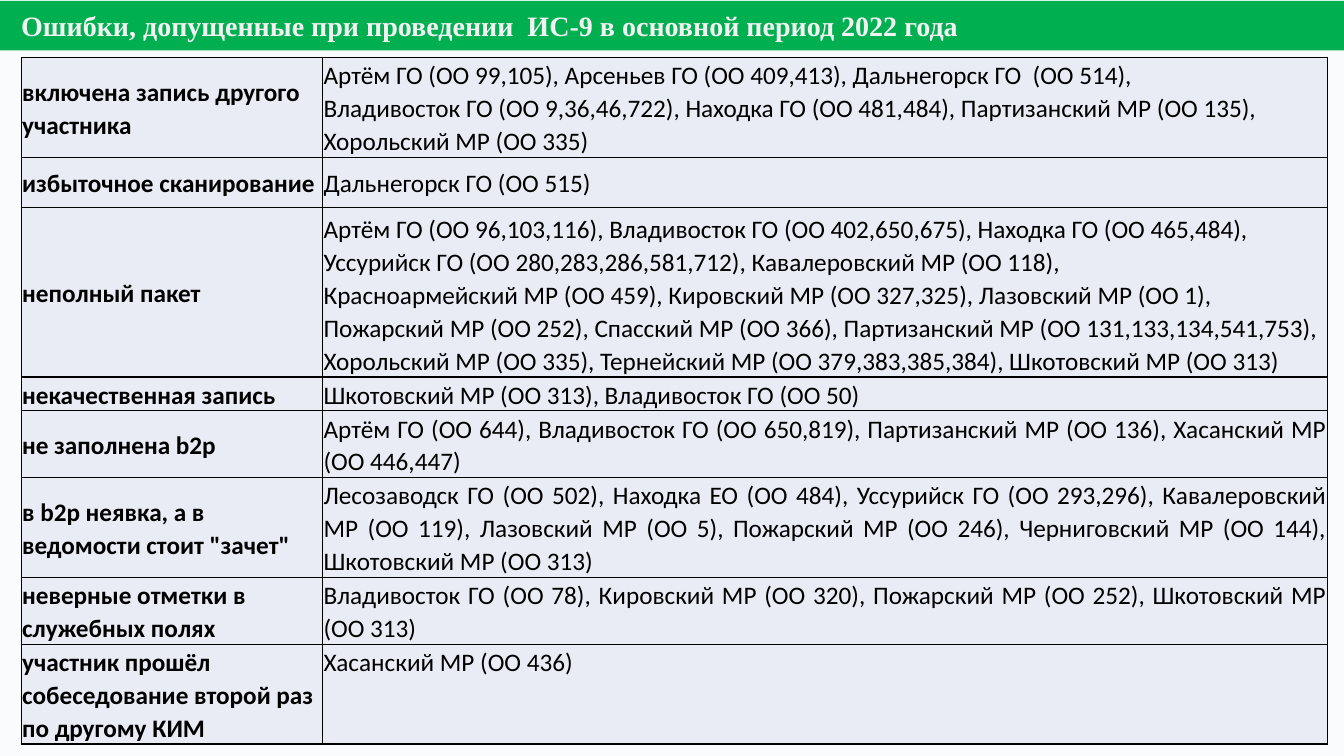
from lxml import etree
from pptx import Presentation
from pptx.dml import color
from pptx.enum import text
from pptx.oxml import ns
from pptx.util import Inches, Pt

BLACK = color.RGBColor(0x00, 0x00, 0x00)
GREEN = color.RGBColor(0x00, 0xAF, 0x50)
PALE = color.RGBColor(0xF2, 0xF2, 0xF2)
LAVENDER = color.RGBColor(0xE9, 0xEB, 0xF5)
BACKDROP = color.RGBColor(0xF9, 0xFB, 0xFC)

LEFT, JUSTIFY = text.PP_ALIGN.LEFT, text.PP_ALIGN.JUSTIFY
TOP, MIDDLE, BOTTOM = text.MSO_ANCHOR.TOP, text.MSO_ANCHOR.MIDDLE, text.MSO_ANCHOR.BOTTOM

ERRORS = [
    (0.99, "включена запись другого участника", LEFT, BOTTOM,
     "Артём ГО (ОО 99,105), Арсеньев ГО (ОО 409,413), Дальнегорск ГО  (ОО 514), \n"
     "Владивосток ГО (ОО 9,36,46,722), Находка ГО (ОО 481,484), Партизанский МР (ОО 135), \n"
     "Хорольский МР (ОО 335)"),
    (0.5, "избыточное сканирование", JUSTIFY, MIDDLE, "Дальнегорск ГО (ОО 515)"),
    (1.68, "неполный пакет", LEFT, BOTTOM,
     "Артём ГО (ОО 96,103,116), Владивосток ГО (ОО 402,650,675), Находка ГО (ОО 465,484), \n"
     "Уссурийск ГО (ОО 280,283,286,581,712), Кавалеровский МР (ОО 118), \n"
     "Красноармейский МР (ОО 459), Кировский МР (ОО 327,325), Лазовский МР (ОО 1), "
     "Пожарский МР (ОО 252), Спасский МР (ОО 366), Партизанский МР (ОО 131,133,134,541,753), "
     "Хорольский МР (ОО 335), Тернейский МР (ОО 379,383,385,384), Шкотовский МР (ОО 313)"),
    (0.28, "некачественная запись", JUSTIFY, BOTTOM,
     "Шкотовский МР (ОО 313), Владивосток ГО (ОО 50)"),
    (0.48, "не заполнена b2p", JUSTIFY, BOTTOM,
     "Артём ГО (ОО 644), Владивосток ГО (ОО 650,819), Партизанский МР (ОО 136), "
     "Хасанский МР (ОО 446,447)"),
    (0.97, 'в b2p неявка, а в ведомости стоит "зачет"', JUSTIFY, BOTTOM,
     "Лесозаводск ГО (ОО 502), Находка ЕО (ОО 484), Уссурийск ГО (ОО 293,296), "
     "Кавалеровский МР (ОО 119), Лазовский МР (ОО 5), Пожарский МР (ОО 246), "
     "Черниговский МР (ОО 144), Шкотовский МР (ОО 313)"),
    (0.49, "неверные отметки в служебных полях", JUSTIFY, TOP,
     "Владивосток ГО (ОО 78), Кировский МР (ОО 320), Пожарский МР (ОО 252), "
     "Шкотовский МР (ОО 313)"),
    (0.72, "участник прошёл собеседование второй раз по другому КИМ", JUSTIFY, TOP,
     "Хасанский МР (ОО 436)"),
]


def apply(target, formats):
    for name, value in formats.items():
        setattr(target, name, value)


def write(paragraph, words, ink, formats):
    paragraph.text = words
    for run in paragraph.runs:
        apply(run.font, formats)
        run.font.color.rgb = ink


deck = Presentation()
apply(deck, {"slide_width": Inches(13.33), "slide_height": Inches(7.5)})
slide = deck.slides.add_slide(deck.slide_layouts[5])
slide.background.fill.solid()
slide.background.fill.fore_color.rgb = BACKDROP

heading = slide.shapes.title
apply(heading, {"left": 0, "top": Inches(0.01),
                "width": Inches(13.33), "height": Inches(0.49)})
heading.fill.solid()
heading.fill.fore_color.rgb = GREEN
apply(heading.text_frame, {
    "margin_left": Inches(0.21), "margin_right": 0, "margin_top": 0, "margin_bottom": 0,
    "vertical_anchor": MIDDLE, "word_wrap": True, "auto_size": text.MSO_AUTO_SIZE.NONE})
heading_line = heading.text_frame.paragraphs[0]
heading_line.alignment = LEFT
write(heading_line, "Ошибки, допущенные при проведении  ИС-9 в основной период 2022 года",
      PALE, {"name": "Times New Roman", "size": Pt(20), "bold": True})

frame = slide.shapes.add_table(len(ERRORS), 2, Inches(0.21), Inches(0.57),
                               Inches(12.96), Inches(6.69))
errors = frame.table
apply(errors, {"first_row": False, "horz_banding": False})
for column, width in zip(errors.columns, (2.99, 9.97)):
    column.width = Inches(width)

for row, (height, mistake, alignment, anchor, places) in zip(errors.rows, ERRORS):
    row.height = Inches(height)
    entries = [(mistake, LEFT, MIDDLE, True), (places, alignment, anchor, False)]
    for cell, (words, align, vertical, bold) in zip(row.cells, entries):
        for side in ("lnL", "lnR", "lnT", "lnB"):
            border = etree.SubElement(cell._tc.get_or_add_tcPr(), ns.qn(f"a:{side}"),
                                      w=str(Pt(1)))
            ink = etree.SubElement(border, ns.qn("a:solidFill"))
            etree.SubElement(ink, ns.qn("a:srgbClr"), val=str(BLACK))
        cell.fill.solid()
        cell.fill.fore_color.rgb = LAVENDER
        apply(cell, {"margin_left": Inches(0.01), "margin_right": Inches(0.01),
                     "margin_top": Inches(0.01), "margin_bottom": 0,
                     "vertical_anchor": vertical})
        line = cell.text_frame.paragraphs[0]
        apply(line, {"alignment": align, "line_spacing": 1.07, "space_after": Pt(8)})
        write(line, words, BLACK, {"name": "Calibri", "size": Pt(18), "bold": bold})

frame.height = Inches(6.69)
deck.save("out.pptx")
